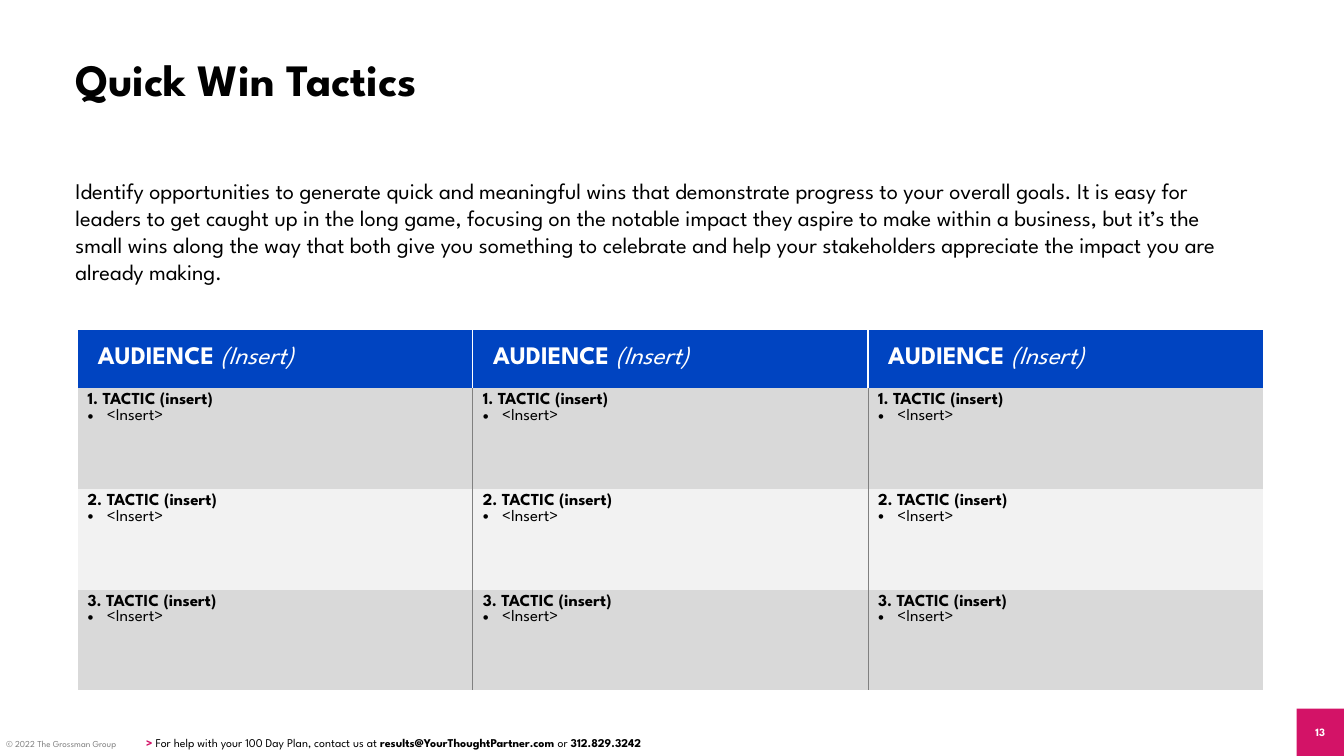
from dataclasses import dataclass

from lxml.etree import SubElement
from pptx import Presentation
from pptx.dml.color import RGBColor
from pptx.enum.shapes import MSO_SHAPE
from pptx.enum.text import MSO_ANCHOR, PP_ALIGN
from pptx.oxml.ns import qn
from pptx.util import Inches, Pt


@dataclass(frozen=True)
class Theme:
    """Colours, type sizes and font of the slide."""

    font: str = "League Spartan"
    black: str = "000000"
    white: str = "FFFFFF"
    gray: str = "808080"
    pink: str = "D31367"
    blue: str = "0044C1"
    bands: tuple = ("D9D9D9", "F2F2F2")
    title_size: float = 32
    header_size: float = 18
    intro_size: float = 16
    cell_size: float = 12
    contact_size: float = 8.5
    number_size: float = 8
    copyright_size: float = 6.5


THEME = Theme()
COLUMN_COUNT = 3
TACTIC_COUNT = 3
HEADER_HEIGHT = 0.58
INTRO = (
    "Identify opportunities to generate quick and meaningful wins that demonstrate "
    "progress to your overall goals. It is easy for leaders to get caught up in the "
    "long game, focusing on the notable impact they aspire to make within a business, "
    "but it’s the small wins along the way that both give you something to celebrate "
    "and help your stakeholders appreciate the impact you are already making."
)


def add_text(paragraph, text, *, size, color=THEME.black, bold=False, italic=False):
    """Append one formatted run to a paragraph."""
    run = paragraph.add_run()
    run.text = text
    run.font.name = THEME.font
    run.font.size = Pt(size)
    run.font.bold = bold
    run.font.italic = italic
    run.font.color.rgb = RGBColor.from_string(color)


def add_text_box(slide, box, anchor=MSO_ANCHOR.TOP, inset=True):
    """Add a wrapping text box and return its first paragraph."""
    frame = slide.shapes.add_textbox(*map(Inches, box)).text_frame
    frame.word_wrap = True
    frame.vertical_anchor = anchor
    if not inset:
        frame.margin_left = frame.margin_right = 0
        frame.margin_top = frame.margin_bottom = 0
    return frame.paragraphs[0]


def add_title(slide, box):
    """Place the slide title."""
    paragraph = add_text_box(slide, box, MSO_ANCHOR.MIDDLE)
    paragraph.line_spacing = 0.9
    add_text(paragraph, "Quick Win Tactics", size=THEME.title_size, bold=True)


def add_intro(slide, box):
    """Place the introductory paragraph."""
    add_text(add_text_box(slide, box), INTRO, size=THEME.intro_size)


def add_footer(slide, box):
    """Place the copyright, contact line and page number along the bottom."""
    left, top, width, height = box
    bottom = top + height
    notice = add_text_box(slide, (left + 0.06, bottom - 0.17, 1.28, 0.11), inset=False)
    add_text(notice, "© 2022 The Grossman Group",
             size=THEME.copyright_size, color=THEME.gray)

    contact = add_text_box(slide, (left + 1.35, bottom - 0.25, 6.29, 0.24),
                           MSO_ANCHOR.BOTTOM)
    for text, color, bold in (
        ("> ", THEME.pink, True),
        ("For help with your 100 Day Plan, contact us at ", THEME.black, False),
        ("results@YourThoughtPartner.com ", THEME.black, True),
        ("or ", THEME.black, False),
        ("312.829.3242", THEME.black, True),
    ):
        add_text(contact, text, size=THEME.contact_size, color=color, bold=bold)

    badge = slide.shapes.add_shape(
        MSO_SHAPE.RECTANGLE, Inches(left + width - 0.47), Inches(top),
        Inches(0.47), Inches(height))
    badge.shadow.inherit = False
    badge.fill.solid()
    badge.fill.fore_color.rgb = RGBColor.from_string(THEME.pink)
    badge.line.fill.background()
    frame = badge.text_frame
    frame.margin_left = frame.margin_right = 0
    frame.vertical_anchor = MSO_ANCHOR.MIDDLE
    paragraph = frame.paragraphs[0]
    paragraph.alignment = PP_ALIGN.CENTER
    add_text(paragraph, "13", size=THEME.number_size, color=THEME.white, bold=True)


def set_borders(cell, left, right):
    """Draw the side borders given as (colour, width) and clear the others."""
    properties = cell._tc.get_or_add_tcPr()
    edges = {"a:lnL": left, "a:lnR": right, "a:lnT": None, "a:lnB": None}
    for tag, border in edges.items():
        line = SubElement(properties, qn(tag))
        if border is None:
            SubElement(line, qn("a:noFill"))
        else:
            color, width = border
            line.set("w", str(Pt(width)))
            fill = SubElement(line, qn("a:solidFill"))
            SubElement(fill, qn("a:srgbClr")).set("val", color)


def fill_cell(cell, color, column, divider):
    """Give a table cell its borders and background."""
    set_borders(cell, divider if column > 0 else None,
                divider if column < COLUMN_COUNT - 1 else None)
    cell.fill.solid()
    cell.fill.fore_color.rgb = RGBColor.from_string(color)


def write_header(cell):
    """Write an audience heading."""
    cell.margin_left = Inches(0.2)
    cell.vertical_anchor = MSO_ANCHOR.MIDDLE
    paragraph = cell.text_frame.paragraphs[0]
    add_text(paragraph, "AUDIENCE ", size=THEME.header_size,
             color=THEME.white, bold=True)
    add_text(paragraph, "(Insert)", size=THEME.header_size,
             color=THEME.white, italic=True)


def write_tactic(cell, number):
    """Write a numbered tactic with one bullet below it."""
    frame = cell.text_frame
    add_text(frame.paragraphs[0], f"{number}. TACTIC (insert)",
             size=THEME.cell_size, bold=True)
    item = frame.add_paragraph()
    properties = item._p.get_or_add_pPr()
    properties.set("marL", str(Inches(0.19)))
    properties.set("indent", str(-Inches(0.19)))
    SubElement(properties, qn("a:buFont")).set("typeface", "Arial")
    SubElement(properties, qn("a:buChar")).set("char", "•")
    add_text(item, "<Insert>", size=THEME.cell_size)


def add_tactics_table(slide, box):
    """Place the table of tactics by audience."""
    width, height = box[2:]
    table = slide.shapes.add_table(
        TACTIC_COUNT + 1, COLUMN_COUNT, *map(Inches, box)).table
    for column in table.columns:
        column.width = Inches(width / COLUMN_COUNT)
    for index, row in enumerate(table.rows):
        row.height = Inches(
            (height - HEADER_HEIGHT) / TACTIC_COUNT if index else HEADER_HEIGHT)
        for column, cell in enumerate(row.cells):
            if index == 0:
                fill_cell(cell, THEME.blue, column, (THEME.white, 1))
                write_header(cell)
            else:
                fill_cell(cell, THEME.bands[(index - 1) % 2], column,
                          (THEME.gray, 0.75))
                write_tactic(cell, index)


def main():
    """Build and save the presentation."""
    presentation = Presentation()
    presentation.slide_width = Inches(13.33)
    presentation.slide_height = Inches(7.5)
    slide = presentation.slides.add_slide(presentation.slide_layouts[6])
    add_footer(slide, (0, 7.03, 13.33, 0.47))
    add_title(slide, (0.65, 0.09, 11.23, 1.45))
    add_intro(slide, (0.65, 1.71, 11.59, 1.18))
    add_tactics_table(slide, (0.77, 3.27, 11.76, 3.58))
    presentation.save("out.pptx")


if __name__ == "__main__":
    main()
